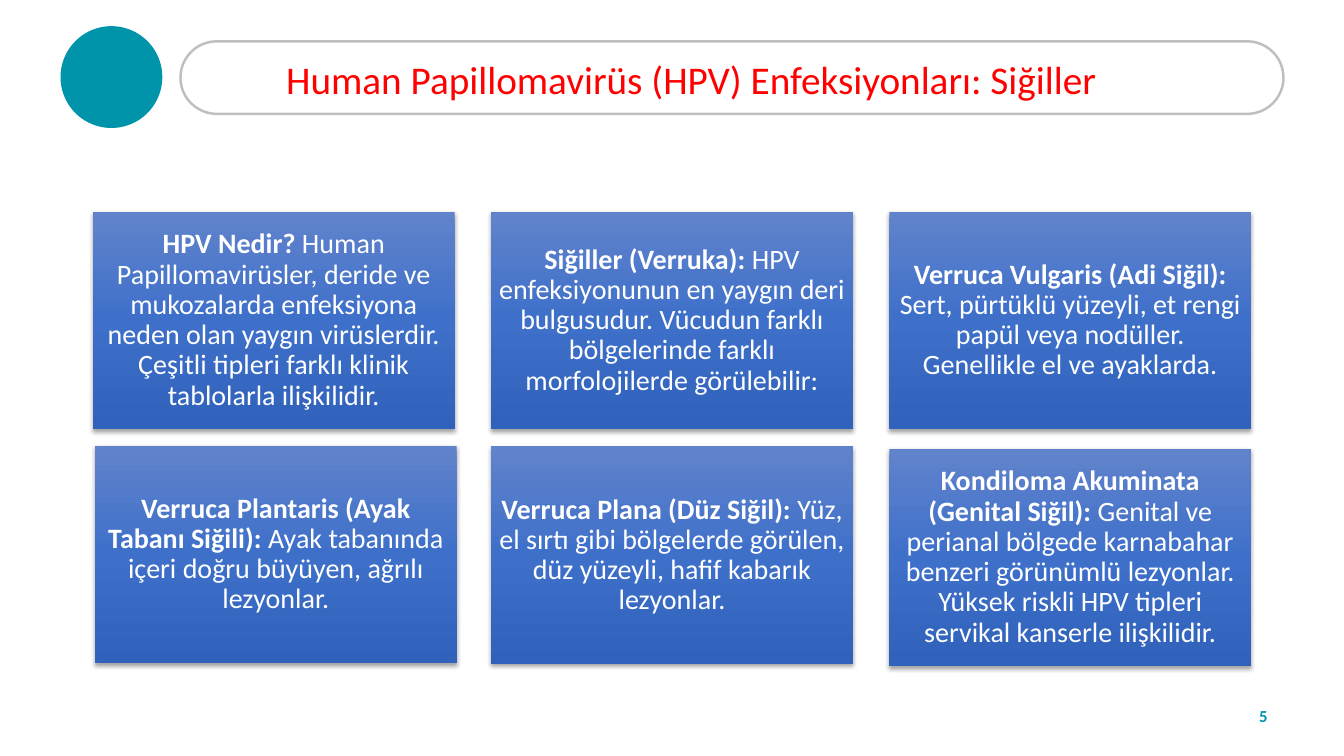
from copy import deepcopy
from dataclasses import dataclass

from lxml import etree
from pptx import Presentation
from pptx import util as u
from pptx.dml.color import RGBColor
from pptx.enum import shapes, text
from pptx.oxml.ns import qn


@dataclass(frozen=True)
class Theme:
    font: str = "Calibri"
    teal: str = "0094AB"
    outline: str = "BFBFBF"
    title: str = "FF0000"
    card_text: str = "FFFFFF"
    card_stops: tuple = ((0, "6183CB"), (0.5, "3E70CA"), (1, "3062BB"))
    shadow: str = "000000"
    title_size: int = 28
    card_size: int = 20
    number_size: int = 12


def write(tf, runs, size, color, align=text.PP_ALIGN.CENTER, spacing=1.0,
          margin=None, font="Calibri"):
    """Fill a text frame with one paragraph of (words, bold) runs."""
    tf.word_wrap = True
    tf.vertical_anchor = text.MSO_ANCHOR.MIDDLE
    if margin is not None:
        tf.margin_left = tf.margin_right = u.Inches(margin)
        tf.margin_top = tf.margin_bottom = u.Inches(margin)
    p = tf.paragraphs[0]
    p.alignment = align
    p.line_spacing = spacing
    for words, bold in runs:
        r = p.add_run()
        r.text = words
        r.font.name = font
        r.font.size = u.Pt(size)
        r.font.bold = bold
        r.font.color.rgb = RGBColor.from_string(color)


class SlideBuilder:
    def __init__(self, prs, theme):
        self.theme = theme
        self.s = prs.slides.add_slide(prs.slide_layouts[6])

    def shape(self, kind, box, fill=None, line=None, width=1.75):
        sp = self.s.shapes.add_shape(kind, *map(u.Inches, box))
        sp.shadow.inherit = False
        if fill:
            sp.fill.solid()
            sp.fill.fore_color.rgb = RGBColor.from_string(fill)
        else:
            sp.fill.background()
        if line:
            sp.line.color.rgb = RGBColor.from_string(line)
            sp.line.width = u.Pt(width)
        else:
            sp.line.fill.background()
        return sp

    def label(self, box, words, bold=False, **style):
        tf = self.s.shapes.add_textbox(*map(u.Inches, box)).text_frame
        write(tf, [(words, bold)], font=self.theme.font, **style)

    def gradient(self, sp, stops):
        sp.fill.gradient()
        sp.fill.gradient_angle = 270  # counter-clockwise: top to bottom
        gs_list = sp._element.spPr.find(qn("a:gradFill")).find(qn("a:gsLst"))
        gs_list.insert(1, deepcopy(gs_list[0]))
        for stop, (position, color) in zip(sp.fill.gradient_stops, stops):
            stop.position = position
            stop.color.rgb = RGBColor.from_string(color)

    def drop_shadow(self, sp, blur=3.1, dist=1.8, alpha=35):
        effects = sp._element.spPr.find(qn("a:effectLst"))
        outer = etree.SubElement(
            effects, qn("a:outerShdw"), blurRad=str(u.Pt(blur)),
            dist=str(u.Pt(dist)), dir="5400000", algn="ctr", rotWithShape="0")
        color = etree.SubElement(outer, qn("a:srgbClr"), val=self.theme.shadow)
        etree.SubElement(color, qn("a:alpha"), val=str(alpha * 1000))

    def card(self, box, heading, body):
        t = self.theme
        sp = self.shape(shapes.MSO_SHAPE.RECTANGLE, box)
        self.gradient(sp, t.card_stops)
        self.drop_shadow(sp)
        write(sp.text_frame, [(heading, True), (body, False)], t.card_size,
              t.card_text, spacing=0.9, margin=0.08, font=t.font)


CARD_W, CARD_H = 3.59, 2.16
CARDS = [  # left, top, heading, body
    (0.92, 2.1, "HPV Nedir?",
     " Human Papillomavirüsler, deride ve mukozalarda enfeksiyona neden olan "
     "yaygın virüslerdir. Çeşitli tipleri farklı klinik tablolarla ilişkilidir."),
    (4.87, 2.1, "Siğiller (Verruka):",
     " HPV enfeksiyonunun en yaygın deri bulgusudur. Vücudun farklı "
     "bölgelerinde farklı morfolojilerde görülebilir:"),
    (8.82, 2.1, "Verruca Vulgaris (Adi Siğil):",
     " Sert, pürtüklü yüzeyli, et rengi papül veya nodüller. "
     "Genellikle el ve ayaklarda."),
    (0.94, 4.42, "Verruca Plantaris (Ayak Tabanı Siğili): ",
     "Ayak tabanında içeri doğru büyüyen, ağrılı lezyonlar."),
    (4.87, 4.43, "Verruca Plana (Düz Siğil):",
     " Yüz, el sırtı gibi bölgelerde görülen, düz yüzeyli, hafif kabarık "
     "lezyonlar."),
    (8.82, 4.45, "Kondiloma Akuminata (Genital Siğil):",
     " Genital ve perianal bölgede karnabahar benzeri görünümlü lezyonlar. "
     "Yüksek riskli HPV tipleri servikal kanserle ilişkilidir."),
]


def main():
    prs = Presentation()
    prs.slide_width, prs.slide_height = u.Inches(13.33), u.Inches(7.5)
    theme = Theme()
    slide = SlideBuilder(prs, theme)

    # Header: disc and rounded frame
    slide.shape(shapes.MSO_SHAPE.OVAL, (0.6, 0.26, 1.01, 1.01), fill=theme.teal)
    frame = slide.shape(shapes.MSO_SHAPE.ROUNDED_RECTANGLE,
                        (1.79, 0.41, 10.94, 0.72), line=theme.outline)
    frame.adjustments[0] = 0.5

    # Slide number and title
    slide.label((12.33, 6.7, 0.4, 0.8), "5", bold=True,
                size=theme.number_size, color=theme.teal)
    slide.label((2.74, 0.4, 9.62, 0.83),
                "Human Papillomavirüs (HPV) Enfeksiyonları: Siğiller",
                size=theme.title_size, color=theme.title,
                align=text.PP_ALIGN.LEFT, spacing=0.9)

    # Cards
    for left, top, heading, body in CARDS:
        slide.card((left, top, CARD_W, CARD_H), heading, body)

    prs.save("out.pptx")


if __name__ == "__main__":
    main()
